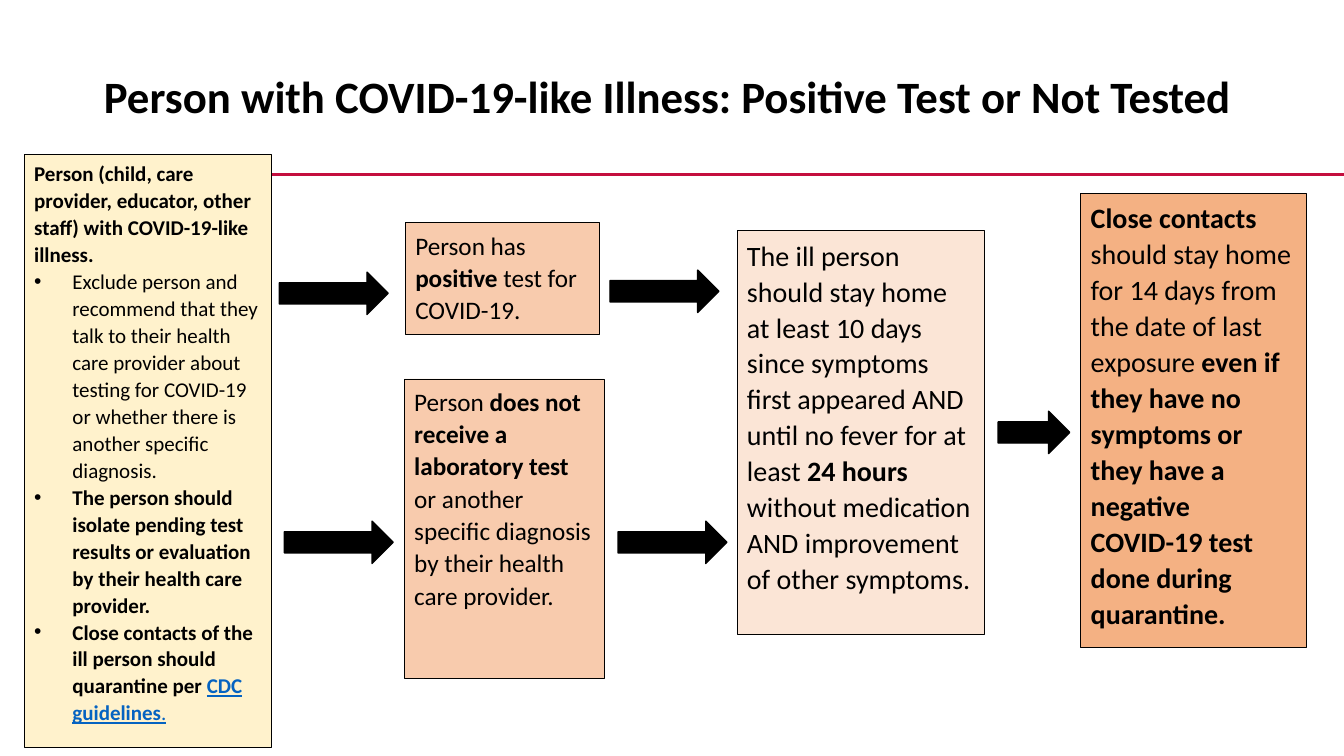
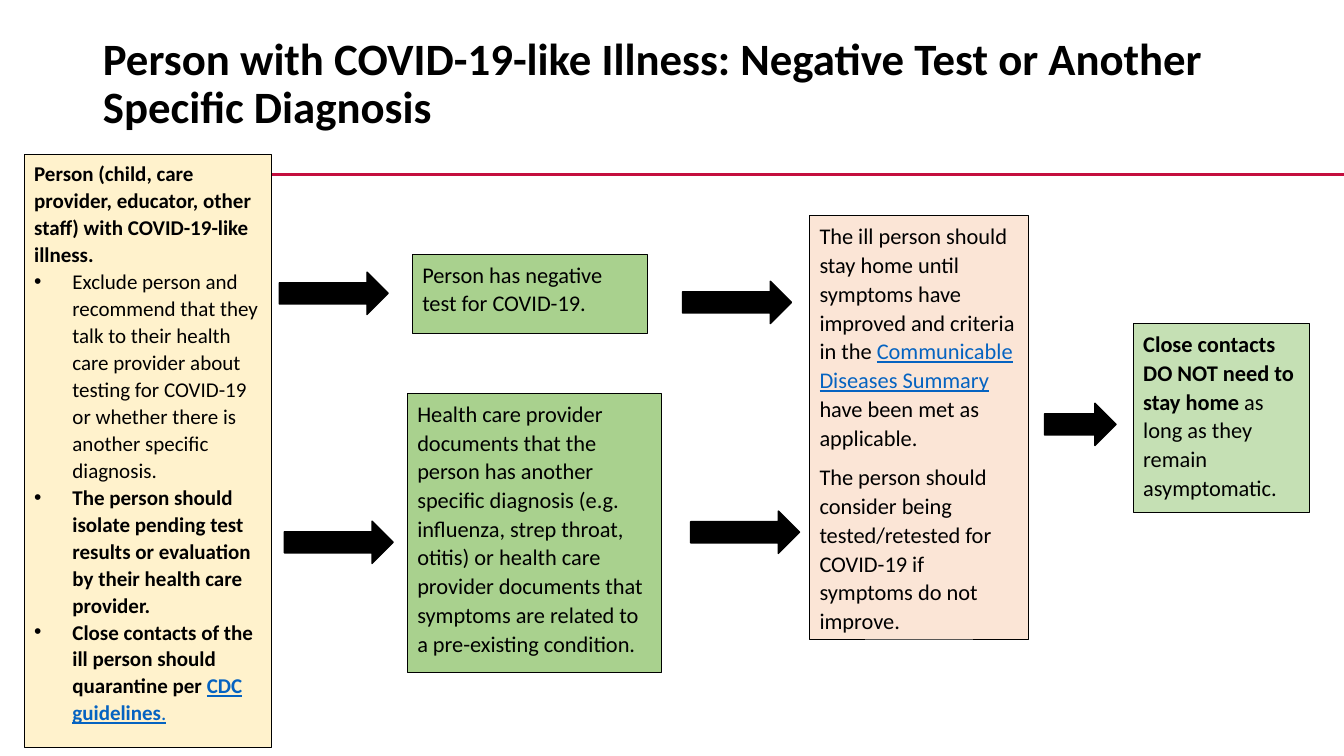
from lxml import etree
from pptx import Presentation
from pptx import util as u
from pptx.dml.color import RGBColor
from pptx.enum import shapes, text
from pptx.oxml.ns import qn

BLACK = RGBColor(0x00, 0x00, 0x00)
RED = RGBColor(0xC4, 0x0E, 0x3E)
LINK_BLUE = RGBColor(0x05, 0x63, 0xC1)
CREAM = RGBColor(0xFF, 0xF2, 0xCC)
PALE_PEACH = RGBColor(0xFB, 0xE5, 0xD6)
PEACH = RGBColor(0xF8, 0xCB, 0xAD)
ORANGE = RGBColor(0xF4, 0xB1, 0x83)
GREEN = RGBColor(0xA9, 0xD1, 0x8E)
PALE_GREEN = RGBColor(0xC5, 0xE0, 0xB4)

PLAIN, BOLD, LINK, BOLD_LINK = "plain", "bold", "link", "bold link"

ILLNESS_HEADING = [
    ("Person (child, care provider, educator, other staff) with COVID-19-like illness.", BOLD)]
ILLNESS_STEPS = [
    [("Exclude person and recommend that they talk to their health care provider about "
      "testing for COVID-19 or whether there is another specific diagnosis.", PLAIN)],
    [("The person should isolate pending test results or evaluation by their "
      "health care provider.", BOLD)],
    [("Close contacts of the ill person should quarantine per ", BOLD),
     ("CDC guidelines", BOLD_LINK), (".", LINK)],
]


class FlowDeck:
    """Holds the deck's style and the slide being built."""

    font = "Calibri"
    line_spacing = 1.07
    arrow_height = 0.42
    long_arrow = 1.08
    short_arrow = 0.71

    def __init__(self):
        self.deck = Presentation()
        self.deck.slide_width = u.Inches(13.33)
        self.deck.slide_height = u.Inches(7.5)
        self.page = None

    def add_page(self, title, left, top):
        """Start a slide with its title, rule and the illness box that opens each flow."""
        self.page = self.deck.slides.add_slide(self.deck.slide_layouts[5])
        self.add_title(title, left, top)
        self.add_rule()
        self.add_illness_box()

    def add_title(self, title, left, top):
        box = self.page.shapes.title
        box.left, box.top = u.Inches(left), u.Inches(top)
        box.width, box.height = u.Inches(11.5), u.Inches(1.09)
        frame = box.text_frame
        frame.auto_size = text.MSO_AUTO_SIZE.NONE
        frame.vertical_anchor = text.MSO_ANCHOR.MIDDLE
        para = frame.paragraphs[0]
        para.alignment = text.PP_ALIGN.LEFT
        para.line_spacing = 0.9
        self.add_spans(para, [(title, BOLD)], 32)

    def add_rule(self):
        rule = self.page.shapes.add_connector(
            shapes.MSO_CONNECTOR.STRAIGHT,
            u.Inches(1.08), u.Inches(1.73), u.Inches(13.33), u.Inches(1.73))
        rule.line.color.rgb = RED
        rule.line.width = u.Pt(2.25)
        etree.SubElement(rule.element.spPr, qn("a:effectLst"))

    def add_shape(self, preset, place, fill, line_width):
        shape = self.page.shapes.add_shape(preset, *(u.Inches(length) for length in place))
        shape.shadow.inherit = False
        shape.fill.solid()
        shape.fill.fore_color.rgb = fill
        shape.line.color.rgb = BLACK
        shape.line.width = u.Pt(line_width)
        return shape

    def add_arrow(self, left, top, width=long_arrow):
        self.add_shape(shapes.MSO_SHAPE.RIGHT_ARROW,
                       (left, top, width, self.arrow_height), BLACK, 1)

    def add_box(self, place, fill, size, *paragraphs, space_after=8):
        box = self.add_shape(shapes.MSO_SHAPE.RECTANGLE, place, fill, 0.5)
        frame = box.text_frame
        frame.word_wrap = True
        frame.vertical_anchor = text.MSO_ANCHOR.TOP
        for index, spans in enumerate(paragraphs):
            para = frame.add_paragraph() if index else frame.paragraphs[0]
            para.alignment = text.PP_ALIGN.LEFT
            para.line_spacing = self.line_spacing
            para.space_after = u.Pt(space_after)
            self.add_spans(para, spans, size)
        return box

    def add_illness_box(self):
        box = self.add_box((0.24, 1.53, 2.45, 5.88), CREAM, 15,
                           ILLNESS_HEADING, *ILLNESS_STEPS, space_after=0)
        for para in box.text_frame.paragraphs[1:]:
            self.add_bullet(para)

    def add_bullet(self, para):
        properties = para._p.get_or_add_pPr()
        indent = u.Inches(0.38)
        properties.set("marL", str(indent))
        properties.set("indent", str(-indent))
        etree.SubElement(properties, qn("a:buFont"), typeface="Arial")
        etree.SubElement(properties, qn("a:buChar"), char="•")

    def add_spans(self, para, spans, size):
        for words, style in spans:
            span = para.add_run()
            span.text = words
            font = span.font
            font.name = self.font
            font.size = u.Pt(size)
            font.bold = style in (BOLD, BOLD_LINK)
            linked = style in (LINK, BOLD_LINK)
            font.underline = linked
            font.color.rgb = LINK_BLUE if linked else BLACK


def add_positive_page(flow):
    flow.add_page("Person with COVID-19-like Illness: Positive Test or Not Tested", 0.93, 0.44)
    for left, top in ((2.77, 2.7), (2.82, 5.17), (6.05, 2.68), (6.13, 5.17)):
        flow.add_arrow(left, top)
    flow.add_arrow(9.9, 4.08, flow.short_arrow)
    flow.add_box((4.02, 2.21, 1.92, 1.11), PEACH, 18, [
        ("Person has ", PLAIN), ("positive", BOLD), (" test for COVID-19.", PLAIN)])
    flow.add_box((4.01, 3.76, 1.98, 2.97), PEACH, 18, [
        ("Person ", PLAIN), ("does not receive a laboratory test ", BOLD),
        ("or another specific diagnosis by their health care provider.", PLAIN)])
    flow.add_box((7.31, 2.29, 2.45, 4), PALE_PEACH, 20, [
        ("The ill person should stay home at least 10 days since symptoms first appeared "
         "AND until no fever for at least ", PLAIN),
        ("24 hours", BOLD),
        (" without medication AND improvement of other symptoms.", PLAIN)])
    flow.add_box((10.72, 1.92, 2.24, 4.5), ORANGE, 20, [
        ("Close contacts ", BOLD),
        ("should stay home for 14 days from the date of last exposure ", PLAIN),
        ("even if they have no symptoms or they have a negative COVID-19 test "
         "done during quarantine.", BOLD)])


def add_negative_page(flow):
    flow.add_page("Person with COVID-19-like Illness: Negative Test or Another "
                  "Specific Diagnosis", 0.92, 0.3)
    for left, top in ((2.77, 2.7), (2.82, 5.17), (6.77, 2.79), (6.85, 5.07)):
        flow.add_arrow(left, top)
    flow.add_arrow(10.36, 4, flow.short_arrow)
    flow.add_box((4.09, 2.52, 2.33, 0.79), GREEN, 16, [
        ("Person has negative test for COVID-19.", PLAIN)])
    flow.add_box((4.04, 3.9, 2.52, 2.77), GREEN, 16, [
        ("Health care provider documents that the person has another specific diagnosis "
         "(e.g. influenza, strep throat, otitis) or health care provider documents that "
         "symptoms are related to a pre-existing condition.", PLAIN)])
    flow.add_box(
        (8.03, 2.14, 2.17, 4.2), PALE_PEACH, 16,
        [("The ill person should stay home until symptoms have improved and criteria "
          "in the ", PLAIN),
         ("Communicable Diseases Summary", LINK),
         (" have been met as applicable.", PLAIN)],
        [("The person should consider being tested/retested for COVID-19 if symptoms "
          "do not improve.", PLAIN)])
    flow.add_box((11.24, 3.21, 1.75, 1.87), PALE_GREEN, 16, [
        ("Close contacts DO NOT need to stay home", BOLD),
        (" as long as they remain asymptomatic.", PLAIN)])


def main():
    flow = FlowDeck()
    add_positive_page(flow)
    add_negative_page(flow)
    flow.deck.save("out.pptx")


if __name__ == "__main__":
    main()
